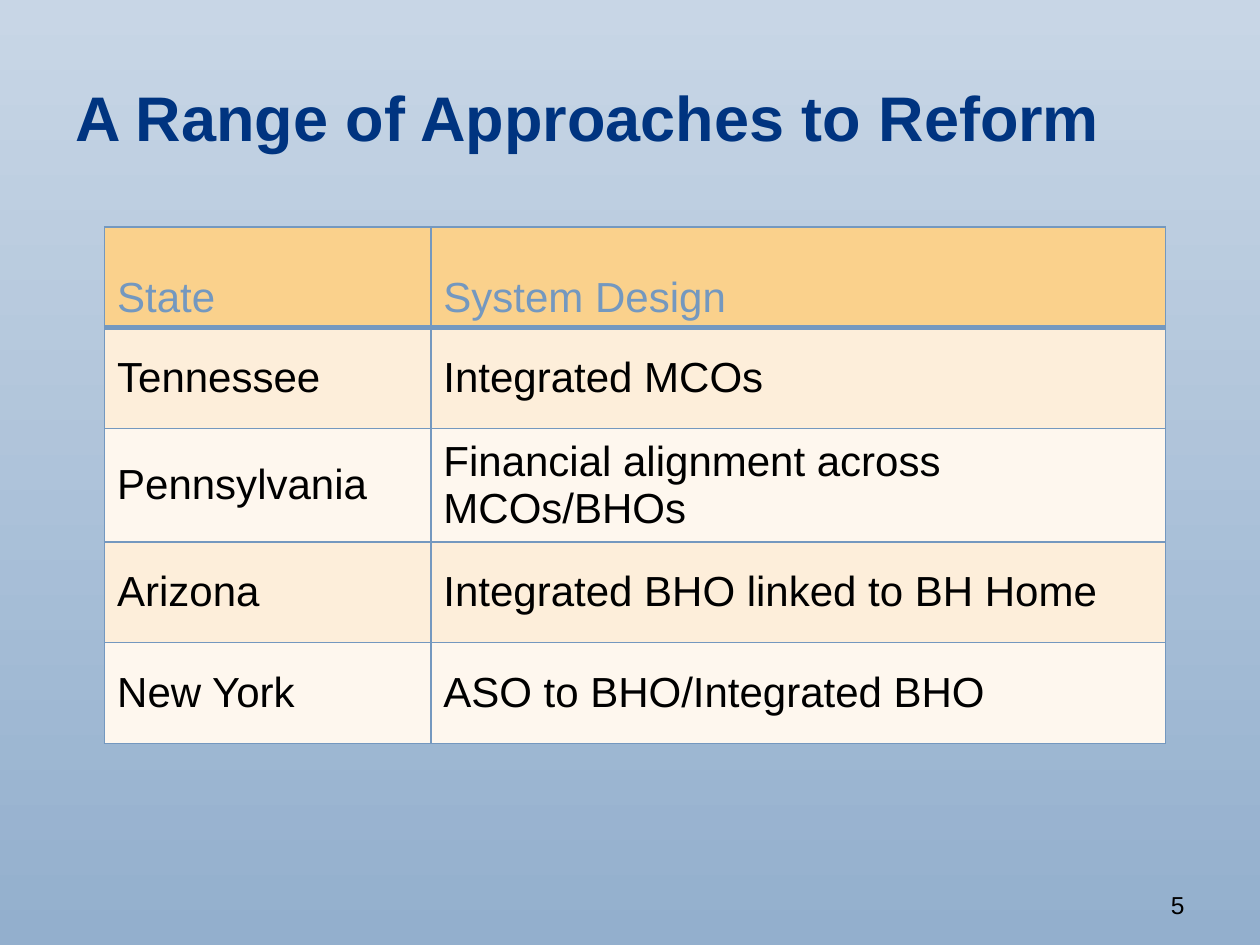
from dataclasses import dataclass

from lxml.etree import SubElement
from pptx import Presentation
from pptx.dml.color import RGBColor
from pptx.enum.text import MSO_ANCHOR as Anchor, PP_ALIGN as Align
from pptx.oxml.ns import qn
from pptx.util import Inches, Pt


@dataclass(frozen=True)
class Theme:
    font: str = "Arial"
    title_size: int = 36
    table_size: int = 24
    number_size: int = 14
    title: str = "003480"
    text: str = "000000"
    accent: str = "7498BF"
    header_fill: str = "FAD18C"
    band_fills: tuple[str, str] = ("FDEEDA", "FEF7EE")
    background: tuple[str, str] = ("C8D6E6", "93AFCD")


@dataclass(frozen=True)
class Label:
    text: str
    box: tuple[float, float, float, float]
    size: int
    color: str
    anchor: Anchor
    align: Align = Align.LEFT
    bold: bool = False


@dataclass(frozen=True)
class StateDesign:
    state: str
    design: str


THEME = Theme()
LABELS = [
    Label("A Range of Approaches to Reform", (0.5, 0.3, 9, 1.25),
          THEME.title_size, THEME.title, Anchor.MIDDLE, bold=True),
    Label("5", (7.17, 6.83, 2.33, 0.52),
          THEME.number_size, THEME.text, Anchor.BOTTOM, Align.RIGHT),
]
HEADER = StateDesign("State", "System Design")
STATES = [
    StateDesign("Tennessee", "Integrated MCOs"),
    StateDesign("Pennsylvania", "Financial alignment across MCOs/BHOs"),
    StateDesign("Arizona", "Integrated BHO linked to BH Home"),
    StateDesign("New York", "ASO to BHO/Integrated BHO"),
]
TABLE_LEFT, TABLE_TOP, ROW_HEIGHT = 0.83, 1.8, 0.8
COLUMN_WIDTHS = (2.59, 5.83)


def style_font(paragraph, size: int, color: str, bold: bool = False) -> None:
    font = paragraph.font
    font.name, font.size, font.bold = THEME.font, Pt(size), bold
    font.color.rgb = RGBColor.from_string(color)


def fill_background(slide) -> None:
    fill = slide.background.fill
    fill.gradient()
    fill.gradient_angle = 270  # counter-clockwise, so top to bottom
    for stop, color in zip(fill.gradient_stops, THEME.background):
        stop.color.rgb = RGBColor.from_string(color)


def add_label(slide, label: Label) -> None:
    frame = slide.shapes.add_textbox(*map(Inches, label.box)).text_frame
    frame.word_wrap = True
    frame.vertical_anchor = label.anchor
    paragraph = frame.paragraphs[0]
    paragraph.text = label.text
    paragraph.alignment = label.align
    style_font(paragraph, label.size, label.color, label.bold)


def add_borders(cell, bottom_width: int) -> None:
    """Outline the cell; call before filling, as lines precede the fill in XML."""
    properties = cell._tc.get_or_add_tcPr()
    for side, width in (("L", 1), ("R", 1), ("T", 1), ("B", bottom_width)):
        line = SubElement(properties, qn(f"a:ln{side}"), w=str(Pt(width)))
        SubElement(SubElement(line, qn("a:solidFill")), qn("a:srgbClr"), val=THEME.accent)


def fill_row(row, entry: StateDesign, fill: str, color: str,
             anchor: Anchor, bottom_width: int = 1) -> None:
    row.height = Inches(ROW_HEIGHT)
    for cell, text in zip(row.cells, (entry.state, entry.design)):
        add_borders(cell, bottom_width)
        cell.fill.solid()
        cell.fill.fore_color.rgb = RGBColor.from_string(fill)
        cell.vertical_anchor = anchor
        cell.text = text
        style_font(cell.text_frame.paragraphs[0], THEME.table_size, color)


def add_state_table(slide) -> None:
    row_count = len(STATES) + 1
    table = slide.shapes.add_table(
        row_count, len(COLUMN_WIDTHS), Inches(TABLE_LEFT), Inches(TABLE_TOP),
        Inches(sum(COLUMN_WIDTHS)), Inches(ROW_HEIGHT * row_count)).table
    for column, width in zip(table.columns, COLUMN_WIDTHS):
        column.width = Inches(width)
    fill_row(table.rows[0], HEADER, THEME.header_fill, THEME.accent, Anchor.BOTTOM, 3)
    for index, entry in enumerate(STATES):
        fill_row(table.rows[index + 1], entry, THEME.band_fills[index % 2],
                 THEME.text, Anchor.MIDDLE)


def main() -> None:
    presentation = Presentation()
    presentation.slide_width, presentation.slide_height = Inches(10), Inches(7.5)
    slide = presentation.slides.add_slide(presentation.slide_layouts[6])
    fill_background(slide)
    title, slide_number = LABELS
    add_label(slide, title)
    add_state_table(slide)
    add_label(slide, slide_number)
    presentation.save("out.pptx")


if __name__ == "__main__":
    main()
